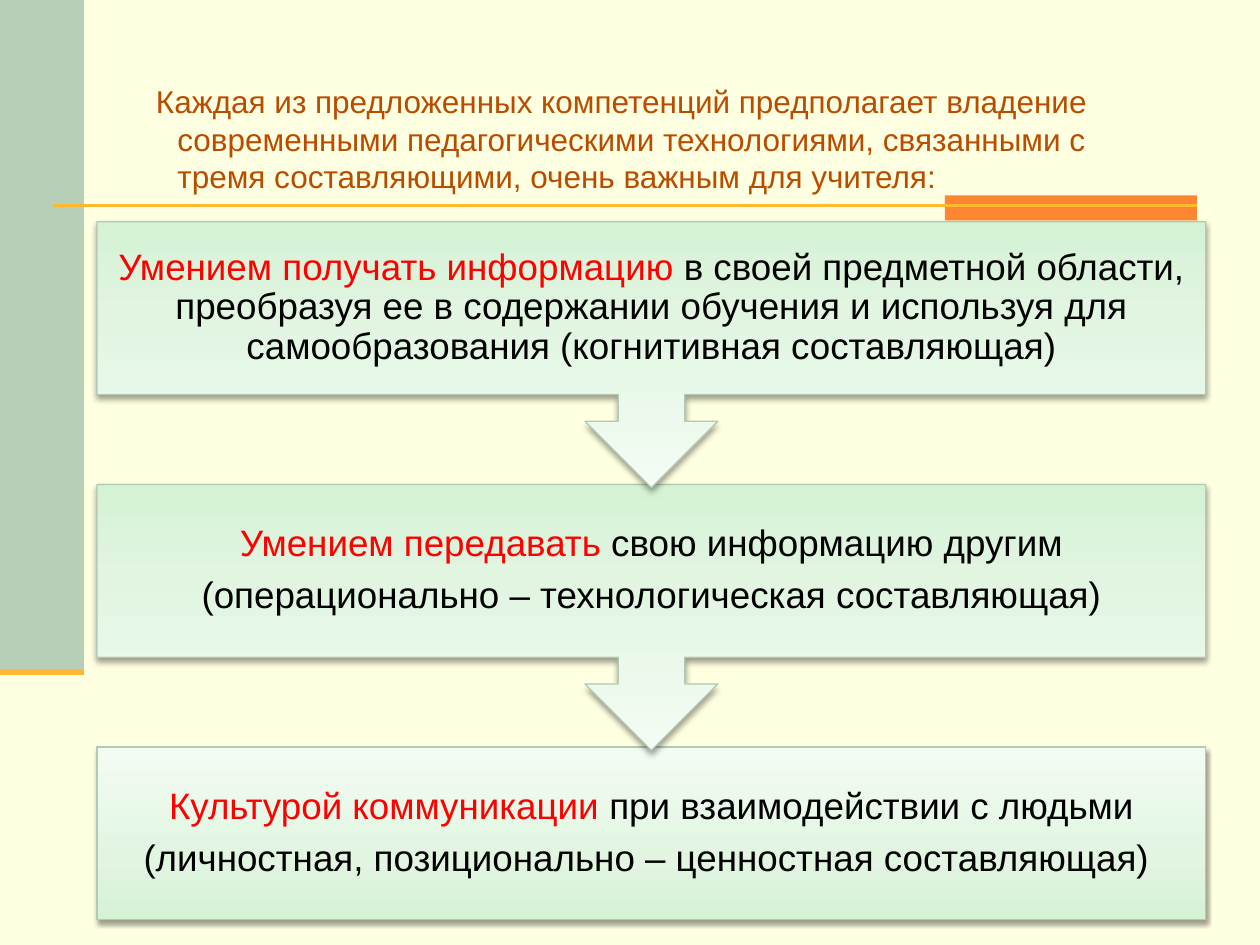
from dataclasses import dataclass

from pptx import Presentation
from pptx.dml.color import RGBColor
from pptx.enum.shapes import MSO_CONNECTOR, MSO_SHAPE
from pptx.enum.text import MSO_ANCHOR, PP_ALIGN
from pptx.oxml import parse_xml
from pptx.oxml.ns import nsdecls, qn
from pptx.util import Inches, Pt

INTRO = ("Каждая из предложенных компетенций предполагает владение современными "
         "педагогическими технологиями, связанными с тремя составляющими, "
         "очень важным для учителя:")

# Each component: (highlighted words, rest of the sentence, further line or None)
COMPONENTS = [
    ("Умением получать информацию ",
     "в своей предметной области, преобразуя ее в содержании обучения "
     "и используя для самообразования (когнитивная составляющая)", None),
    ("Умением передавать ", "свою информацию другим",
     "(операционально – технологическая составляющая)"),
    ("Культурой коммуникации ", "при взаимодействии с людьми",
     "(личностная, позиционально – ценностная составляющая) "),
]


@dataclass(frozen=True)
class Theme:
    font: str = "Arial"
    intro_size: float = 18
    step_size: float = 21
    background: str = "FFFFE1"
    sidebar: str = "B7CEB7"
    accent: str = "FF8630"
    rule: str = "FFB82F"
    intro: str = "BA4C00"
    highlight: str = "FF0000"
    body: str = "000000"
    outline: str = "B2CAB2"
    gradient: tuple = ((0, "D5F2D5"), (35, "E1F5E1"), (100, "F3FCF3"))


THEME = Theme()
WIDTH, HEIGHT = 10, 7.5
SIDEBAR_WIDTH, SIDEBAR_HEIGHT = WIDTH / 15, 5.33
STEP_LEFT, STEP_TOP, STEP_WIDTH = 0.77, 1.76, 8.8
STEP_HEIGHT, STEP_PITCH, CALLOUT_HEIGHT = 1.37, 2.085, 2.11


def rgb(value):
    return RGBColor.from_string(value)


def inches(*values):
    return [Inches(value) for value in values]


def add_block(slide, area, color):
    block = slide.shapes.add_shape(MSO_SHAPE.RECTANGLE, *inches(*area))
    block.shadow.inherit = False
    block.fill.solid()
    block.fill.fore_color.rgb = rgb(color)
    block.line.fill.background()


def add_rule(slide, left, right, y, weight):
    rule = slide.shapes.add_connector(MSO_CONNECTOR.STRAIGHT, *inches(left, y, right, y))
    rule.line.color.rgb = rgb(THEME.rule)
    rule.line.width = Pt(weight)
    rule._element.spPr.append(parse_xml(f"<a:effectLst {nsdecls('a')}/>"))


def add_panel(slide, area, preset, rotation):
    """Add an outlined panel with the green gradient and a soft shadow."""
    panel = slide.shapes.add_shape(preset, *inches(*area))
    panel.rotation = rotation
    panel.line.color.rgb = rgb(THEME.outline)
    panel.line.width = Pt(0.75)
    panel.fill.gradient()
    panel.fill.gradient_angle = 90
    stops = "".join(f'<a:gs pos="{share * 1000}"><a:srgbClr val="{color}"/></a:gs>'
                    for share, color in THEME.gradient)
    properties = panel._element.spPr
    gradient = properties.find(qn("a:gradFill"))
    gradient.replace(gradient.find(qn("a:gsLst")),
                     parse_xml(f"<a:gsLst {nsdecls('a')}>{stops}</a:gsLst>"))
    panel.shadow.inherit = False
    properties.find(qn("a:effectLst")).append(parse_xml(
        f'<a:outerShdw {nsdecls("a")} blurRad="{Pt(3.1)}" dist="{Pt(1.6)}" '
        'dir="5400000" rotWithShape="0"><a:srgbClr val="000000">'
        '<a:alpha val="38000"/></a:srgbClr></a:outerShdw>'))


def add_text(slide, area, paragraphs, *, size, align=PP_ALIGN.LEFT,
             anchor=MSO_ANCHOR.MIDDLE, margins=(0.1, 0.05), line_spacing=1.0,
             before=0, after=0, indent=(0, 0)):
    """Add paragraphs, each a list of (text, color) runs."""
    frame = slide.shapes.add_textbox(*inches(*area)).text_frame
    frame.word_wrap = True
    frame.vertical_anchor = anchor
    frame.margin_left = frame.margin_right = Inches(margins[0])
    frame.margin_top = frame.margin_bottom = Inches(margins[1])
    for index, runs in enumerate(paragraphs):
        paragraph = frame.add_paragraph() if index else frame.paragraphs[0]
        paragraph.alignment = align
        paragraph.line_spacing = line_spacing
        paragraph.space_before, paragraph.space_after = Pt(before), Pt(after)
        left, first = inches(*indent)
        properties = paragraph._p.get_or_add_pPr()
        properties.set("marL", str(left))
        properties.set("indent", str(first))
        for text, color in runs:
            run = paragraph.add_run()
            run.text = text
            run.font.name = THEME.font
            run.font.size = Pt(size)
            run.font.color.rgb = rgb(color)


def add_step(slide, index):
    highlight, rest, further = COMPONENTS[index]
    top = STEP_TOP + index * STEP_PITCH
    area = (STEP_LEFT, top, STEP_WIDTH, STEP_HEIGHT)
    if index == len(COMPONENTS) - 1:
        add_panel(slide, area, MSO_SHAPE.RECTANGLE, 0)
    else:
        add_panel(slide, (STEP_LEFT, top, STEP_WIDTH, CALLOUT_HEIGHT),
                  MSO_SHAPE.UP_ARROW_CALLOUT, 180)
    paragraphs = [[(highlight, THEME.highlight), (rest, THEME.body)]]
    if further:
        paragraphs.append([(further, THEME.body)])
    add_text(slide, area, paragraphs, size=THEME.step_size, align=PP_ALIGN.CENTER,
             margins=(0.16, 0.16), line_spacing=0.9, after=0.35 * THEME.step_size)


def main():
    deck = Presentation()
    deck.slide_width, deck.slide_height = inches(WIDTH, HEIGHT)
    slide = deck.slides.add_slide(deck.slide_layouts[6])
    slide.background.fill.solid()
    slide.background.fill.fore_color.rgb = rgb(THEME.background)

    add_block(slide, (0, 0, SIDEBAR_WIDTH, SIDEBAR_HEIGHT), THEME.sidebar)
    add_block(slide, (7.5, 1.55, 2, 0.2), THEME.accent)
    add_rule(slide, 0.42, 9.5, 1.63, 1.5)
    add_rule(slide, 0, SIDEBAR_WIDTH, SIDEBAR_HEIGHT, 3.5)

    add_text(slide, (0.93, 0.6, 8.03, 1.37), [[(INTRO, THEME.intro)]],
             size=THEME.intro_size, anchor=MSO_ANCHOR.TOP,
             before=0.2 * THEME.intro_size, indent=(0.38, -0.17))
    for index in reversed(range(len(COMPONENTS))):
        add_step(slide, index)
    deck.save("out.pptx")


if __name__ == "__main__":
    main()
